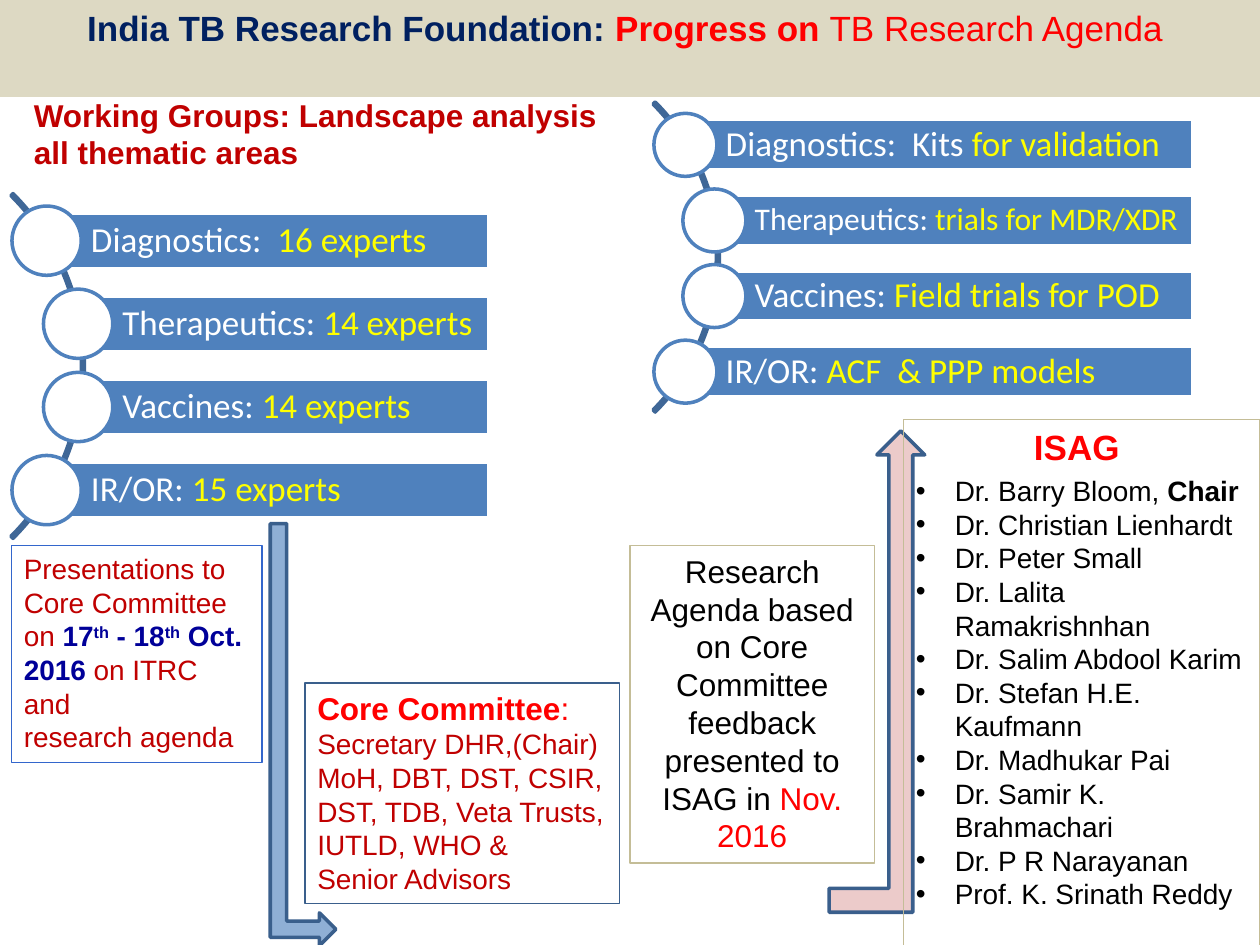
"""Build the TB research agenda progress slide."""
from lxml import etree
from pptx import Presentation
from pptx.dml.color import RGBColor
from pptx.enum.shapes import MSO_SHAPE
from pptx.enum.text import MSO_ANCHOR, PP_ALIGN
from pptx.oxml.ns import qn
from pptx.util import Inches, Pt

RECT, OVAL = MSO_SHAPE.RECTANGLE, MSO_SHAPE.OVAL
ARC, BENT_ARROW = MSO_SHAPE.BLOCK_ARC, MSO_SHAPE.BENT_UP_ARROW
LEFT, CENTER = PP_ALIGN.LEFT, PP_ALIGN.CENTER
TOP, MIDDLE = MSO_ANCHOR.TOP, MSO_ANCHOR.MIDDLE

WHITE = RGBColor(0xFF, 0xFF, 0xFF)
BLACK = RGBColor(0x00, 0x00, 0x00)
YELLOW = RGBColor(0xFF, 0xFF, 0x00)
RED = RGBColor(0xFF, 0x00, 0x00)
DARK_RED = RGBColor(0xC0, 0x00, 0x00)
NAVY = RGBColor(0x00, 0x20, 0x60)
DATE_BLUE = RGBColor(0x00, 0x00, 0x99)
BLUE = RGBColor(0x4F, 0x81, 0xBD)
ARC_BLUE = RGBColor(0x3F, 0x67, 0x97)
EDGE_BLUE = RGBColor(0x3A, 0x5F, 0x8C)
BOX_BLUE = RGBColor(0x33, 0x66, 0xCC)
PINK = RGBColor(0xE6, 0xB9, 0xB8)
TAN = RGBColor(0xC4, 0xBD, 0x97)
BEIGE = RGBColor(0xDD, 0xD9, 0xC3)

EXPERTS = [("Diagnostics:  ", "16 experts", 20), ("Therapeutics: ", "14 experts", 20),
           ("Vaccines: ", "14 experts", 20), ("IR/OR: ", "15 experts", 20)]
PROGRESS = [("Diagnostics:  Kits", " for validation", 20),
            ("Therapeutics: ", "trials for MDR/XDR", 18),
            ("Vaccines: ", "Field trials for POD", 20),
            ("IR/OR: ", "ACF  & PPP models", 20)]
MEMBERS = ["Dr. Christian Lienhardt", "Dr. Peter Small", "Dr. Lalita Ramakrishnhan",
           "Dr. Salim Abdool Karim", "Dr. Stefan H.E. Kaufmann", "Dr. Madhukar Pai",
           "Dr. Samir K. Brahmachari", "Dr. P R Narayanan", "Prof. K. Srinath Reddy"]


def run(text, size, color, bold=False, name="Arial", raised=False):
    """Describe a run as its text, font values and superscript flag."""
    return text, {"size": Pt(size), "bold": bold, "name": name}, color, raised


def add_shape(s, kind, box, fill=None, line=None, width=2.0, alpha=None):
    """Add a preset shape with plain fill and line."""
    sp = s.shapes.add_shape(kind, *(Inches(v) for v in box))
    sp.shadow.inherit = False
    if fill is None:
        sp.fill.background()
    else:
        sp.fill.solid()
        sp.fill.fore_color.rgb = fill
    if alpha is not None:
        clr = sp.fill._xPr.find(qn("a:solidFill"))[0]
        etree.SubElement(clr, qn("a:alpha")).set("val", str(alpha * 1000))
    if line is None:
        sp.line.fill.background()
    else:
        sp.line.color.rgb = line
        sp.line.width = Pt(width)
    return sp


def write(sp, paragraphs, align=LEFT, anchor=TOP, insets=(0.1, 0.05, 0.1, 0.05), spacing=1.0):
    """Write paragraphs of runs into a shape."""
    tf = sp.text_frame
    left, top, right, bottom = (Inches(v) for v in insets)
    frame = {"word_wrap": True, "vertical_anchor": anchor, "margin_left": left,
             "margin_top": top, "margin_right": right, "margin_bottom": bottom}
    for key, value in frame.items():
        setattr(tf, key, value)
    for i, runs in enumerate(paragraphs):
        p = tf.add_paragraph() if i else tf.paragraphs[0]
        p.alignment, p.line_spacing = align, spacing
        for text, font, color, raised in runs:
            r = p.add_run()
            r.text = text
            for key, value in font.items():
                setattr(r.font, key, value)
            r.font.color.rgb = color
            if raised:
                r._r.get_or_add_rPr().set("baseline", "30000")
    return tf


def add_bullet(p, indent):
    """Give a paragraph a hanging round bullet."""
    p.alignment = LEFT
    pPr = p._p.get_or_add_pPr()
    pPr.set("marL", str(Inches(indent)))
    pPr.set("indent", str(-Inches(indent)))
    etree.SubElement(pPr, qn("a:buFont")).set("typeface", "Arial")
    etree.SubElement(pPr, qn("a:buChar")).set("char", "•")


def add_curved_list(s, rows, arc, thickness, left, right, top, step, height, circle, shift):
    """Add a list whose circles follow an arc, the middle rows shifted right."""
    sp = add_shape(s, ARC, arc, line=ARC_BLUE)
    for i, value in enumerate((189, 27, thickness)):
        sp.adjustments[i] = value
    for i, (label, detail, size) in enumerate(rows):
        x = left + (shift if i in (1, 2) else 0)
        y = top + i * step
        bar = add_shape(s, RECT, (x, y, right - x, height), BLUE, WHITE)
        runs = [run(label, size, WHITE, name="Calibri"),
                run(detail, size, YELLOW, name="Calibri")]
        write(bar, [runs], anchor=MIDDLE, spacing=0.9,
              insets=(0.8 * height, 0.06, 0.05, 0.06))
        add_shape(s, OVAL, (x - circle / 2, y + (height - circle) / 2, circle, circle),
                  WHITE, BLUE)


def add_committee_boxes(s):
    """Add the presentation, core committee and research agenda boxes."""
    sp = add_shape(s, RECT, (0.09, 4.33, 1.99, 1.72), line=BOX_BLUE, width=0.75)
    write(sp, [[run("Presentations to Core Committee on ", 16, DARK_RED),
                run("17", 16, DATE_BLUE, True),
                run("th", 16, DATE_BLUE, True, raised=True),
                run(" - 18", 16, DATE_BLUE, True),
                run("th", 16, DATE_BLUE, True, raised=True),
                run(" Oct. 2016 ", 16, DATE_BLUE, True),
                run("on ITRC and", 16, DARK_RED)],
               [run("research agenda", 16, DARK_RED)]])
    sp = add_shape(s, RECT, (2.42, 5.42, 2.5, 1.75), line=EDGE_BLUE, width=0.75)
    lines = ["Secretary DHR,(Chair)",
             "MoH, DBT, DST, CSIR, DST, TDB, Veta Trusts, IUTLD, WHO &", "Senior Advisors"]
    write(sp, [[run("Core Committee", 18, RED, True), run(":", 18, RED)]]
          + [[run(text, 16, DARK_RED)] for text in lines])
    sp = add_shape(s, RECT, (5, 4.33, 1.94, 2.52), line=TAN, width=0.75)
    agenda = "Research Agenda based on Core Committee feedback presented to ISAG in "
    write(sp, [[run(agenda, 18, BLACK), run("Nov. 2016", 18, RED)]], CENTER)


def add_isag(s):
    """Add the bulleted box of ISAG members."""
    sp = add_shape(s, RECT, (7.17, 3.33, 2.83, 4.26), line=TAN, width=0.75)
    chair = [run("Dr. Barry Bloom, ", 16, BLACK), run("Chair", 16, BLACK, True)]
    tf = write(sp, [[run("ISAG ", 20, RED, True)], chair]
               + [[run(name, 16, BLACK)] for name in MEMBERS], CENTER)
    tf.paragraphs[0].space_after = Pt(3.5)
    for p in tf.paragraphs[1:]:
        add_bullet(p, 0.31)


def main():
    """Build and save the slide."""
    prs = Presentation()
    prs.slide_width, prs.slide_height = Inches(10), Inches(7.5)
    s = prs.slides.add_slide(prs.slide_layouts[6])
    add_curved_list(s, EXPERTS, (-3.2, 0.97, 3.87, 3.87), 0.006, left=0.37, right=3.88,
                    top=1.69, step=0.66, height=0.44, circle=0.55, shift=0.25)
    heading = s.shapes.add_textbox(Inches(0.17), Inches(0.71), Inches(4.75), Inches(0.71))
    write(heading, [[run("Working Groups: Landscape analysis all thematic areas",
                         18, DARK_RED, True)]])
    add_committee_boxes(s)
    add_shape(s, BENT_ARROW, (6.58, 3.42, 0.76, 3.82), PINK, EDGE_BLUE, alpha=74)
    add_isag(s)
    add_curved_list(s, PROGRESS, (2.23, 0.3, 3.48, 3.48), 0.007, left=5.44, right=9.47,
                    top=0.95, step=0.6, height=0.4, circle=0.5, shift=0.23)
    arrow = add_shape(s, BENT_ARROW, (0.73, 5.57, 3.35, 0.52), BLUE, EDGE_BLUE, alpha=63)
    arrow.rotation = 90
    title = add_shape(s, RECT, (0, 0, 10, 0.77), BEIGE)
    write(title, [[run("India TB Research Foundation: ", 20, NAVY, True),
                   run("Progress on ", 20, RED, True),
                   run("TB Research Agenda ", 20, RED)]], CENTER)
    prs.save("out.pptx")


if __name__ == "__main__":
    main()
